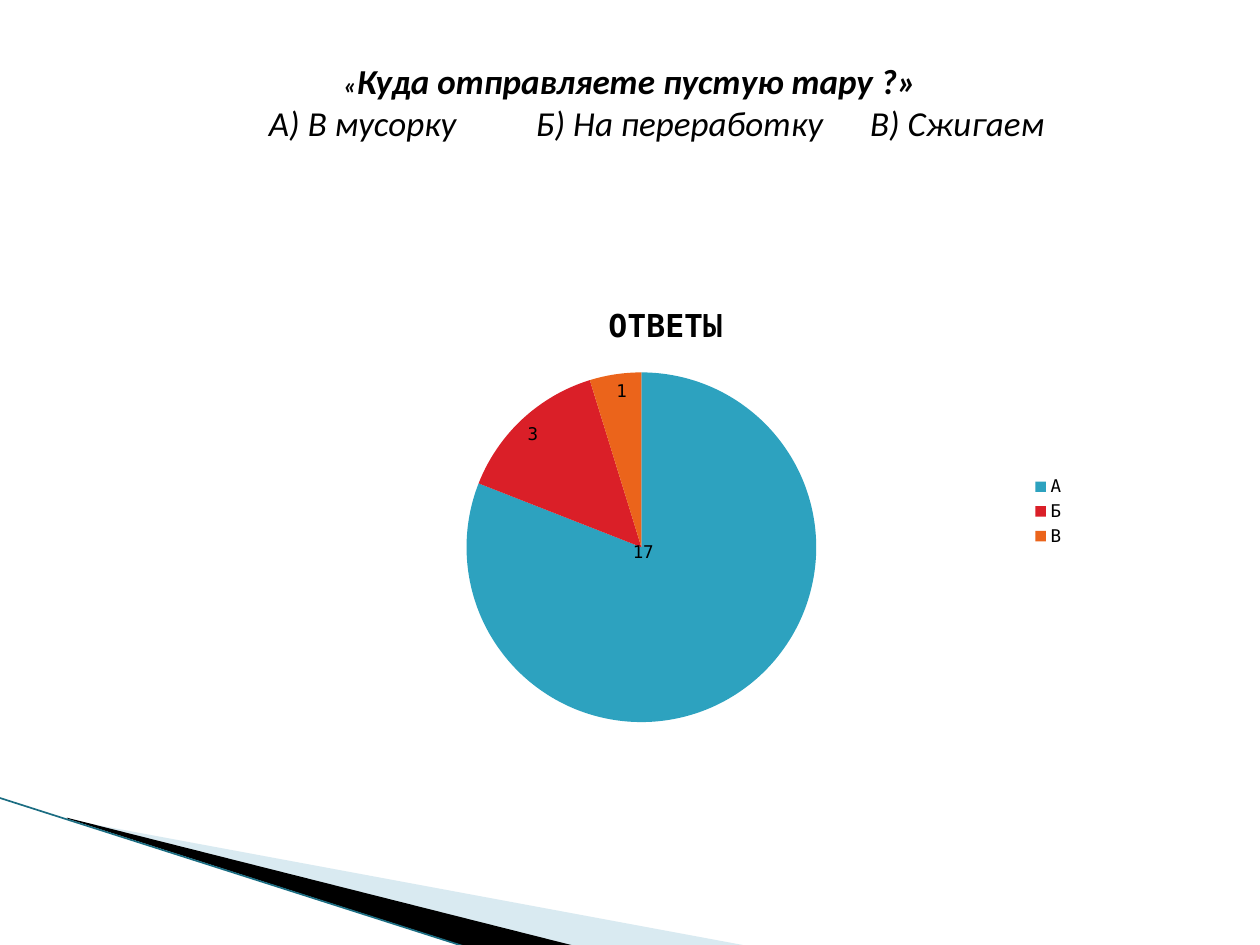
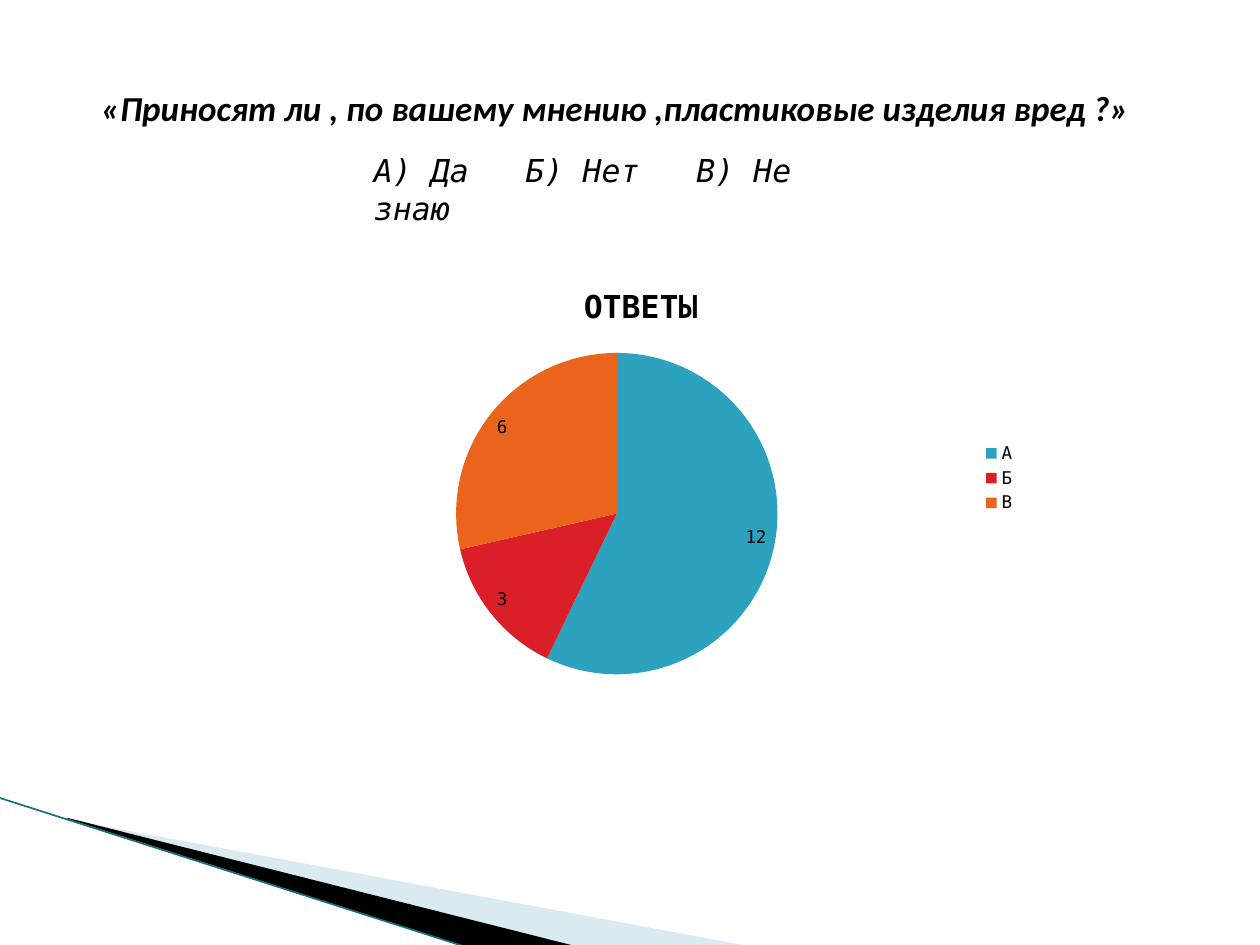
from dataclasses import dataclass

from lxml import etree
from pptx import Presentation
from pptx.chart import data as cd
from pptx.dml import color as clr
from pptx.enum import chart as ch, text as tx
from pptx.enum.shapes import MSO_CONNECTOR
from pptx.oxml import ns
from pptx.util import Pt


@dataclass(frozen=True)
class Theme:
    heading: str = "Calibri"
    mono: str = "DejaVu Sans Mono"
    ink: str = "000000"
    pale: str = "A0CBDC"
    edge: str = "1B6D82"
    slices: tuple = ("2DA2BF", "DA1F28", "EB641B")
    question: int = 20
    quote: int = 14
    answers: int = 18
    chart: int = 10


def rgb(value):
    return clr.RGBColor.from_string(value)


def add(parent, tag, **attrs):
    return etree.SubElement(parent, ns.qn(tag), **attrs)


class Deck:
    def __init__(self, theme):
        self.theme = theme
        self.prs = Presentation()
        self.prs.slide_width, self.prs.slide_height = Pt(720), Pt(540)
        self.layout = self.prs.slide_layouts[5]
        self.s = None

    def new_slide(self):
        self.s = self.prs.slides.add_slide(self.layout)

    def font(self, f, size, name, bold=False, italic=False):
        f.size, f.name, f.bold, f.italic = Pt(size), name, bold, italic
        f.color.rgb = rgb(self.theme.ink)

    def run(self, p, text, size, name, bold=False):
        r = p.add_run()
        r.text = text
        self.font(r.font, size, name, bold, italic=True)

    def tabs(self, p, stops):
        tab_list = add(p._p.get_or_add_pPr(), "a:tabLst")
        for stop in stops:
            add(tab_list, "a:tab", pos=str(Pt(stop)), algn="l")

    def place(self, sp, left, top, width, height):
        sp.left, sp.top, sp.width, sp.height = map(Pt, (left, top, width, height))
        tf = sp.text_frame
        tf.word_wrap = True
        tf.auto_size = tx.MSO_AUTO_SIZE.SHAPE_TO_FIT_TEXT
        return tf

    def title(self, box, runs):
        tf = self.place(self.s.shapes.title, *box)
        tf.vertical_anchor = tx.MSO_ANCHOR.MIDDLE
        p = tf.paragraphs[0]
        p.alignment = tx.PP_ALIGN.CENTER
        for text, size in runs:
            self.run(p, text, size, self.theme.heading, bold=True)
        return tf

    def answers(self, p, text, stops, size, name):
        p.alignment = tx.PP_ALIGN.LEFT
        self.tabs(p, stops)
        self.run(p, text, size, name)

    def text_box(self, box):
        sp = self.s.shapes.add_textbox(*map(Pt, box))
        return self.place(sp, *box)

    def wedge(self, points, color, opacity=None):
        start, *rest = [tuple(map(Pt, pt)) for pt in points]
        fb = self.s.shapes.build_freeform(*start)
        fb.add_line_segments(rest, close=True)
        sp = fb.convert_to_shape()
        sp.shadow.inherit = False
        sp.line.fill.background()
        sp.fill.solid()
        sp.fill.fore_color.rgb = rgb(color)
        if opacity:
            node = sp.element.spPr.find(".//" + ns.qn("a:srgbClr"))
            add(node, "a:alpha", val=str(opacity * 1000))
        return sp

    def line(self, start, end, color, width):
        sp = self.s.shapes.add_connector(
            MSO_CONNECTOR.STRAIGHT, *map(Pt, start + end))
        sp.line.color.rgb = rgb(color)
        sp.line.width = Pt(width)
        add(sp.element.spPr, "a:effectLst")
        return sp

    def share(self, shapes):
        tree = self.layout.shapes.element
        for i, sp in enumerate(shapes):
            sp.element.xpath(".//p:cNvPr")[0].set("id", str(20 + i))
            tree.insert(2 + i, sp.element)

    def corner_bands(self):
        t = self.theme
        self.share([
            self.wedge([(39.6, 468.5), (428.4, 540.7), (328.3, 540.7), (39.6, 468)],
                       t.pale, opacity=40),
            self.wedge([(38.2, 467.3), (329, 540.7), (267.8, 541.4), (38.9, 468)],
                       t.ink),
            self.line((-0.7, 455.8), (267.1, 541.4), t.edge, 0.95),
        ])

    def pie(self, box, values):
        t = self.theme
        data = cd.CategoryChartData()
        data.categories = ["А", "Б", "В"]
        data.add_series("ОТВЕТЫ", values)
        chart = self.s.shapes.add_chart(
            ch.XL_CHART_TYPE.PIE, *map(Pt, box), data).chart
        self.font(chart.font, t.chart, t.mono)
        chart.has_title = True
        p = chart.chart_title.text_frame.paragraphs[0]
        r = p.add_run()
        r.text = "ОТВЕТЫ"
        self.font(r.font, t.answers, t.mono, bold=True)
        chart.chart_title.include_in_layout = False
        chart.has_legend = True
        chart.legend.position = ch.XL_LEGEND_POSITION.RIGHT
        chart.legend.include_in_layout = False
        chart.plots[0].vary_by_categories = True
        series = chart.plots[0].series[0]
        for i, color in enumerate(t.slices):
            fill = series.points[i].format.fill
            fill.solid()
            fill.fore_color.rgb = rgb(color)
        labels = series.data_labels
        labels.show_value = True
        labels.position = ch.XL_LABEL_POSITION.INSIDE_END
        self.font(labels.font, t.chart, t.mono)
        return series

    def shift_label(self, series, index, dx, dy):
        label = series.points[index].data_label
        label.position = ch.XL_LABEL_POSITION.INSIDE_END
        self.font(label.font, self.theme.chart, self.theme.mono)
        idx = series._element.xpath(f"c:dLbls/c:dLbl/c:idx[@val='{index}']")[0]
        layout = etree.Element(ns.qn("c:layout"))
        manual = add(layout, "c:manualLayout")
        add(manual, "c:x", val=str(dx))
        add(manual, "c:y", val=str(dy))
        idx.addnext(layout)


def main():
    t = Theme()
    deck = Deck(t)

    deck.new_slide()
    deck.corner_bands()
    tf = deck.title((0, 30.2, 720, 55.4), [
        ("«", t.quote), ("Куда отправляете пустую тару ?»", t.question)])
    deck.answers(tf.add_paragraph(), "\tА) В мусорку\tБ) На переработку\tВ) Сжигаем",
                 (146.5, 299, 490), t.question, t.heading)
    series = deck.pie((144.7, 162, 470.9, 260.6), (17, 3, 1))
    deck.shift_label(series, 0, -0.1, -0.27)

    deck.new_slide()
    deck.title((14.4, 45.4, 674.6, 31.7), [
        ("«Приносят ли , по вашему мнению ,пластиковые изделия вред ?»", t.question)])
    tf = deck.text_box((206.6, 82.8, 277.2, 28.8))
    deck.answers(tf.paragraphs[0], "А) Да\tБ) Нет\tВ) Не знаю",
                 (86.7, 184.3), t.answers, t.mono)
    deck.pie((144.7, 151.2, 442.8, 244.1), (12, 3, 6))

    deck.prs.save("out.pptx")


if __name__ == "__main__":
    main()
